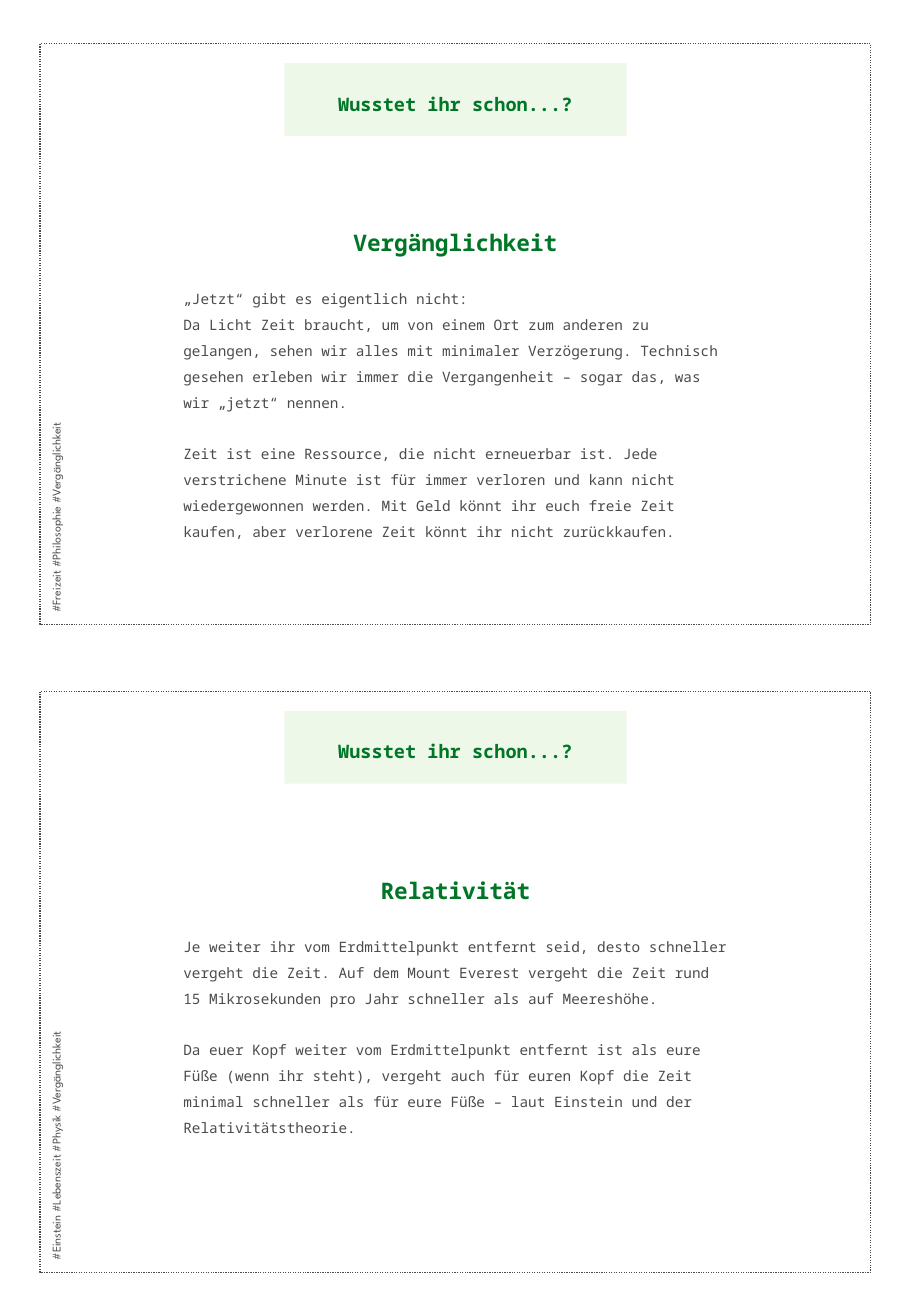
from pptx import Presentation
from pptx.dml.color import RGBColor
from pptx.enum.dml import MSO_LINE
from pptx.enum.shapes import MSO_SHAPE
from pptx.enum.text import MSO_ANCHOR, PP_ALIGN
from pptx.oxml.xmlchemy import OxmlElement
from pptx.util import Pt

HEADING = "Wusstet ihr schon...?"
CARDS = [
    {
        "top": 569,
        "title": "Relativität",
        "body": [
            ["Je weiter ihr vom Erdmittelpunkt entfernt seid, desto schneller vergeht die Zeit. "
             "Auf dem Mount Everest vergeht die Zeit rund 15 Mikrosekunden pro Jahr schneller "
             "als auf Meereshöhe."],
            ["Da euer Kopf weiter vom Erdmittelpunkt entfernt ist als eure Füße (wenn ihr steht), "
             "vergeht auch für euren Kopf die Zeit minimal schneller als für eure Füße – laut "
             "Einstein und der Relativitätstheorie."],
        ],
        "tags": "#Einstein #Lebenszeit #Physik #Vergänglichkeit",
    },
    {
        "top": 36,
        "title": "Vergänglichkeit",
        "body": [
            ["„Jetzt“ gibt es eigentlich nicht:",
             "Da Licht Zeit braucht, um von einem Ort zum anderen zu gelangen, sehen wir alles "
             "mit minimaler Verzögerung. Technisch gesehen erleben wir immer die Vergangenheit "
             "– sogar das, was wir „jetzt“ nennen."],
            ["Zeit ist eine Ressource, die nicht erneuerbar ist. Jede verstrichene Minute ist "
             "für immer verloren und kann nicht wiedergewonnen werden. Mit Geld könnt ihr euch "
             "freie Zeit kaufen, aber verlorene Zeit könnt ihr nicht zurückkaufen."],
        ],
        "tags": "#Freizeit #Philosophie #Vergänglichkeit",
    },
]

SCALE = 9144
PAGE_WIDTH, PAGE_HEIGHT = 750, 1083
CARD_LEFT, CARD_WIDTH, CARD_HEIGHT = 33, 684, 478
BANNER_WIDTH, BANNER_HEIGHT, BANNER_OFFSET = 282, 60, 16
TAG_CENTER, TAG_HEIGHT = 46, 26
GREEN, GRAY, PALE = "007626", "4B4B4D", "DEF2D4"
MONO, SPARTAN = "Noto Sans Mono", "League Spartan"
HEADING_GAP, BODY_GAP = 59.4, 15.3

STYLES = {
    "heading": {"name": MONO, "size": Pt(11), "bold": True},
    "title": {"name": MONO, "size": Pt(13.5), "bold": True},
    "body": {"name": MONO, "size": Pt(8.5), "bold": False},
    "tags": {"name": SPARTAN, "size": Pt(7)},
}


def px(value):
    return round(value * SCALE)


def color(value):
    return RGBColor.from_string(value)


def set_values(target, values):
    for name, value in values.items():
        setattr(target, name, value)


def write(para, text, style, ink):
    span = para.add_run()
    span.text = text
    set_values(span.font, STYLES[style])
    span.font.color.rgb = color(ink)


def add_rectangle(group, *bounds):
    box = group.shapes.add_shape(MSO_SHAPE.RECTANGLE, *map(px, bounds))
    box.shadow.inherit = False
    return box


def add_banner(group, top):
    left = CARD_LEFT + (CARD_WIDTH - BANNER_WIDTH) / 2
    banner = add_rectangle(group, left, top + BANNER_OFFSET, BANNER_WIDTH, BANNER_HEIGHT)
    banner.fill.solid()
    banner.fill.fore_color.rgb = color(PALE)
    alpha = OxmlElement("a:alpha")
    alpha.set("val", "50000")
    banner.fill._xPr.find(".//{*}srgbClr").append(alpha)
    banner.line.fill.background()


def card_lines(card):
    yield HEADING, "heading", 0
    yield card["title"], "title", HEADING_GAP
    for block in card["body"]:
        for index, text in enumerate(block):
            yield text, "body", 0 if index else BODY_GAP


def add_frame(group, card):
    box = add_rectangle(group, CARD_LEFT, card["top"], CARD_WIDTH, CARD_HEIGHT)
    box.fill.background()
    box.line.color.rgb = color(GRAY)
    set_values(box.line, {"width": Pt(0.75), "dash_style": MSO_LINE.ROUND_DOT})
    frame = box.text_frame
    set_values(frame, {
        "word_wrap": True, "vertical_anchor": MSO_ANCHOR.TOP,
        "margin_left": px(118), "margin_right": px(118),
        "margin_top": px(31), "margin_bottom": px(31),
    })
    for index, (text, style, gap) in enumerate(card_lines(card)):
        para = frame.add_paragraph() if index else frame.paragraphs[0]
        is_body = style == "body"
        set_values(para, {
            "alignment": PP_ALIGN.LEFT if is_body else PP_ALIGN.CENTER,
            "line_spacing": 1.5, "space_before": Pt(gap),
        })
        write(para, text, style, GRAY if is_body else GREEN)


def add_tags(group, card):
    left = TAG_CENTER - CARD_HEIGHT / 2
    top = card["top"] + (CARD_HEIGHT - TAG_HEIGHT) / 2
    box = group.shapes.add_textbox(*map(px, (left, top, CARD_HEIGHT, TAG_HEIGHT)))
    box.rotation = 270
    set_values(box.text_frame, {"word_wrap": True, "vertical_anchor": MSO_ANCHOR.MIDDLE})
    write(box.text_frame.paragraphs[0], card["tags"], "tags", GRAY)


def main():
    deck = Presentation()
    set_values(deck, {"slide_width": px(PAGE_WIDTH), "slide_height": px(PAGE_HEIGHT)})
    page = deck.slides.add_slide(deck.slide_layouts[6])
    for card in CARDS:
        group = page.shapes.add_group_shape()
        add_banner(group, card["top"])
        add_frame(group, card)
        add_tags(group, card)
    deck.save("out.pptx")


if __name__ == "__main__":
    main()
